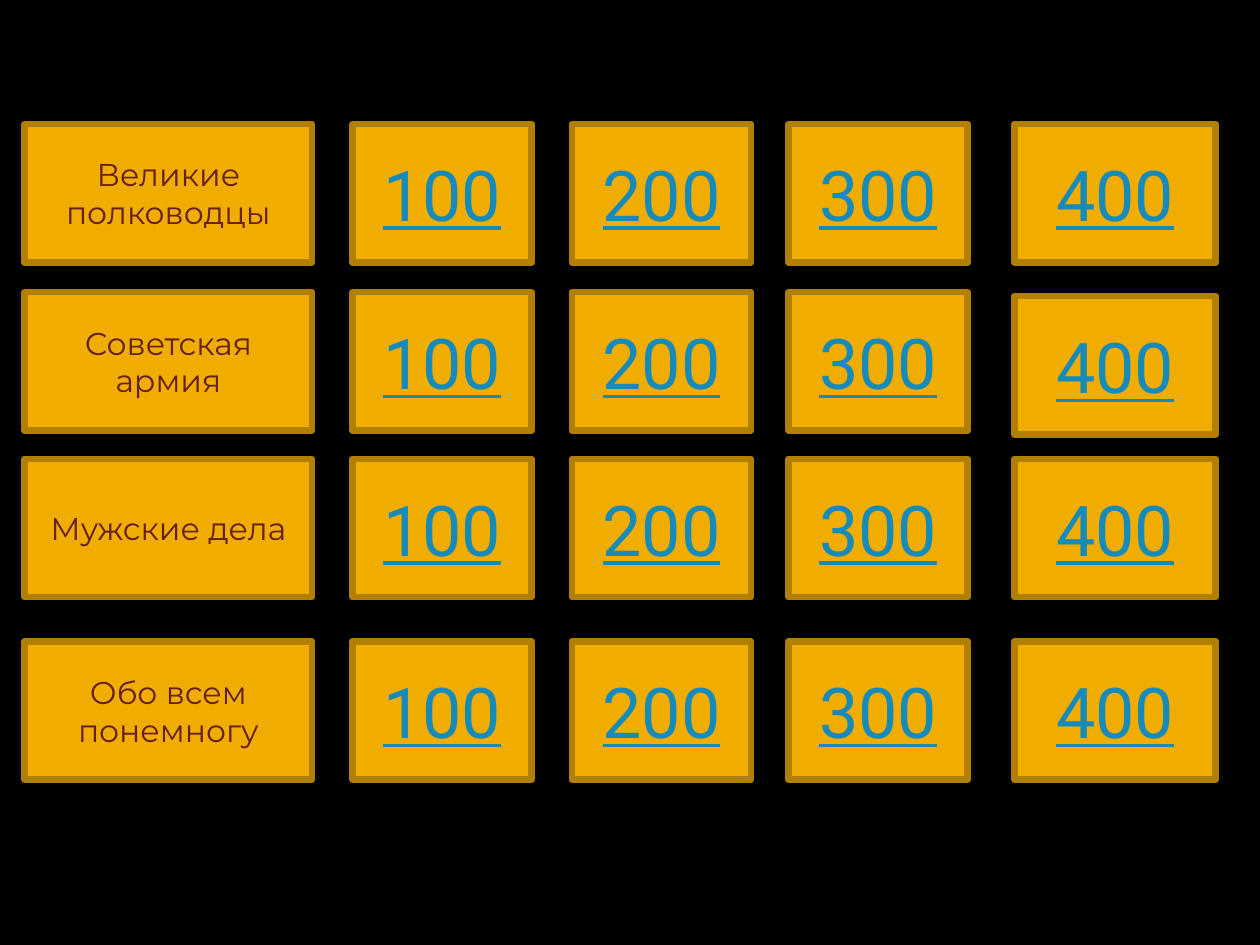
from dataclasses import dataclass

from pptx import Presentation
from pptx.dml.color import RGBColor
from pptx.enum.shapes import MSO_SHAPE
from pptx.enum.text import MSO_ANCHOR, PP_ALIGN
from pptx.shapes.autoshape import Shape
from pptx.slide import Slide
from pptx.util import Cm, Pt

RECTANGLE = MSO_SHAPE.RECTANGLE
MIDDLE = MSO_ANCHOR.MIDDLE
CENTER = PP_ALIGN.CENTER

BACKGROUND = "000000"
CARD_FILL = "F0AD00"
CARD_BORDER = "B28000"
POINTS_COLOR = "168BBA"
TOPIC_COLOR = "672020"
CARD_HEIGHT = 2.79


@dataclass(frozen=True)
class Column:
    left: float
    width: float
    points: str = ""


@dataclass(frozen=True)
class Row:
    top: float
    topic: str
    last_card_shift: float = 0


TOPIC_COLUMN = Column(0.5, 5.79)
POINT_COLUMNS = [
    Column(7.11, 3.61, "100"),
    Column(11.53, 3.61, "200"),
    Column(15.9, 3.61, "300"),
    Column(20.45, 4.06, "400"),
]
ROWS = [
    Row(2.5, "Великие полководцы"),
    Row(5.89, "Советская армия", last_card_shift=0.08),
    Row(9.25, "Мужские дела"),
    Row(12.93, "Обо всем понемногу"),
]


def color(value: str) -> RGBColor:
    return RGBColor.from_string(value)


def write_text(shape: Shape, text: str, *, font: str, size: float,
               text_color: str, underline: bool = False) -> None:
    frame = shape.text_frame
    frame.word_wrap = True
    frame.vertical_anchor = MIDDLE
    paragraph = frame.paragraphs[0]
    paragraph.alignment = CENTER
    run = paragraph.add_run()
    run.text = text
    run.font.name = font
    run.font.size = Pt(size)
    run.font.underline = underline
    run.font.color.rgb = color(text_color)


def add_card(slide: Slide, column: Column, top: float) -> Shape:
    shape = slide.shapes.add_shape(
        RECTANGLE, Cm(column.left), Cm(top), Cm(column.width), Cm(CARD_HEIGHT))
    shape.shadow.inherit = False
    shape.fill.solid()
    shape.fill.fore_color.rgb = color(CARD_FILL)
    shape.line.color.rgb = color(CARD_BORDER)
    shape.line.width = Pt(3.78)
    return shape


def add_row(slide: Slide, row: Row) -> None:
    topic_card = add_card(slide, TOPIC_COLUMN, row.top)
    write_text(topic_card, row.topic, font="Montserrat", size=18,
               text_color=TOPIC_COLOR)
    for column in POINT_COLUMNS:
        shift = row.last_card_shift if column is POINT_COLUMNS[-1] else 0
        points_card = add_card(slide, column, row.top + shift)
        write_text(points_card, column.points, font="Roboto", size=40,
                   text_color=POINTS_COLOR, underline=True)


def main() -> None:
    presentation = Presentation()
    presentation.slide_width = Cm(25.4)
    presentation.slide_height = Cm(19.05)
    slide = presentation.slides.add_slide(presentation.slide_layouts[6])
    slide.background.fill.solid()
    slide.background.fill.fore_color.rgb = color(BACKGROUND)
    for row in ROWS:
        add_row(slide, row)
    presentation.save("out.pptx")


if __name__ == "__main__":
    main()
